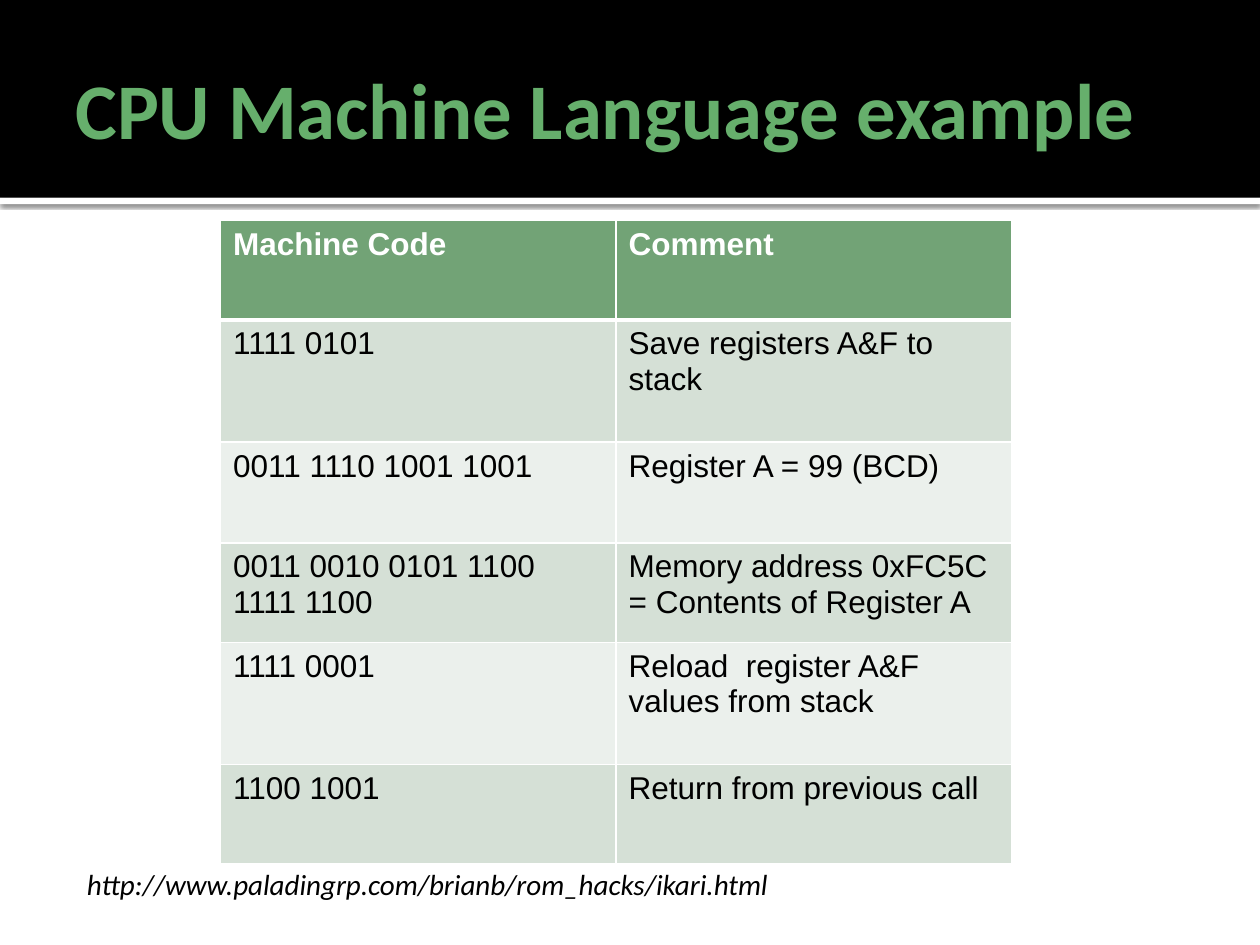
from pptx import Presentation
from pptx.dml.color import RGBColor
from pptx.enum.shapes import MSO_SHAPE
from pptx.enum.text import MSO_ANCHOR
from pptx.oxml import parse_xml
from pptx.oxml.ns import nsdecls, qn
from pptx.util import Inches, Pt

RECT = MSO_SHAPE.RECTANGLE
TOP, MIDDLE = MSO_ANCHOR.TOP, MSO_ANCHOR.MIDDLE

BLACK = RGBColor(0x00, 0x00, 0x00)
WHITE = RGBColor(0xFF, 0xFF, 0xFF)
LEAF = RGBColor(0x66, 0xAF, 0x6C)
HEAD = RGBColor(0x72, 0xA3, 0x76)
BANDS = [RGBColor(0xEB, 0xF0, 0xEC), RGBColor(0xD5, 0xE0, 0xD6)]

# Row height in inches, machine code, comment
ROWS = [
    (0.79, "Machine Code", "Comment"),
    (0.97, "1111 0101", "Save registers A&F to stack"),
    (0.8, "0011 1110 1001 1001", "Register A = 99 (BCD)"),
    (0.79, "0011 0010 0101 1100 1111 1100",
     "Memory address 0xFC5C = Contents of Register A"),
    (0.97, "1111 0001", "Reload  register A&F values from stack"),
    (0.79, "1100 1001", "Return from previous call"),
]


class Deck:
    title = {"name": "Calibri", "size": Pt(45), "bold": True}
    link = {"name": "Calibri", "size": Pt(16.6), "italic": True}
    cell = {"name": "Arial", "size": Pt(18)}

    def __init__(self, wide, high):
        self.prs = Presentation()
        self.prs.slide_width = Inches(wide)
        self.prs.slide_height = Inches(high)
        self.slide = self.prs.slides.add_slide(self.prs.slide_layouts[6])

    def style(self, para, form, color):
        for key, value in form.items():
            setattr(para.font, key, value)
        para.font.color.rgb = color

    def bar(self, box, color, shade=False):
        shape = self.slide.shapes.add_shape(RECT, *map(Inches, box))
        shape.shadow.inherit = False
        shape.fill.solid()
        shape.fill.fore_color.rgb = color
        shape.line.fill.background()
        if shade:
            shape._element.spPr.find(qn("a:effectLst")).append(parse_xml(
                f'<a:outerShdw {nsdecls("a")} blurRad="{Pt(2.5)}" '
                f'dist="{Pt(0.8)}" dir="5400000" rotWithShape="0">'
                '<a:srgbClr val="000000"><a:alpha val="60000"/></a:srgbClr>'
                '</a:outerShdw>'))

    def text(self, box, words, form, color, pads, anchor=TOP):
        frame = self.slide.shapes.add_textbox(*map(Inches, box)).text_frame
        frame.word_wrap = True
        frame.vertical_anchor = anchor
        for side, pad in zip(("left", "top", "right", "bottom"), pads):
            setattr(frame, f"margin_{side}", Inches(pad))
        para = frame.paragraphs[0]
        para.text = words
        self.style(para, form, color)

    def edge(self, cell, side, width):
        cell._tc.get_or_add_tcPr().append(parse_xml(
            f'<a:ln{side} {nsdecls("a")} w="{Pt(width)}"><a:solidFill>'
            f'<a:srgbClr val="{WHITE}"/></a:solidFill></a:ln{side}>'))

    def table(self, left, top, width, rows):
        high = sum(row[0] for row in rows)
        grid = self.slide.shapes.add_table(
            len(rows), 2, Inches(left), Inches(top),
            Inches(width), Inches(high)).table
        for r, (tall, *words) in enumerate(rows):
            grid.rows[r].height = Inches(tall)
            for c, word in enumerate(words):
                cell = grid.cell(r, c)
                # Heavier rule between header and body
                for side in "LRTB":
                    heavy = (r, side) in ((0, "B"), (1, "T"))
                    self.edge(cell, side, 3 if heavy else 1)
                cell.fill.solid()
                cell.fill.fore_color.rgb = BANDS[r % 2] if r else HEAD
                cell.text = word
                self.style(cell.text_frame.paragraphs[0],
                           {**self.cell, "bold": r == 0},
                           BLACK if r else WHITE)


def main():
    deck = Deck(10, 7.5)

    # Title band
    deck.bar((0, 1.57, 10, 0.05), WHITE, shade=True)
    deck.bar((0, 0, 10, 1.57), BLACK)
    deck.text((0.5, 0.17, 9, 1.37), "CPU Machine Language example",
              deck.title, LEAF, (0.1, 0.05, 0.05, 0.05), MIDDLE)

    # Source address
    deck.text((0.5, 6.83, 9, 0.4),
              "http://www.paladingrp.com/brianb/rom_hacks/ikari.html",
              deck.link, BLACK, (0.19, 0.05, 0.1, 0.05))

    # Code table
    deck.table(1.75, 1.75, 6.28, ROWS)

    deck.prs.save("out.pptx")


if __name__ == "__main__":
    main()
